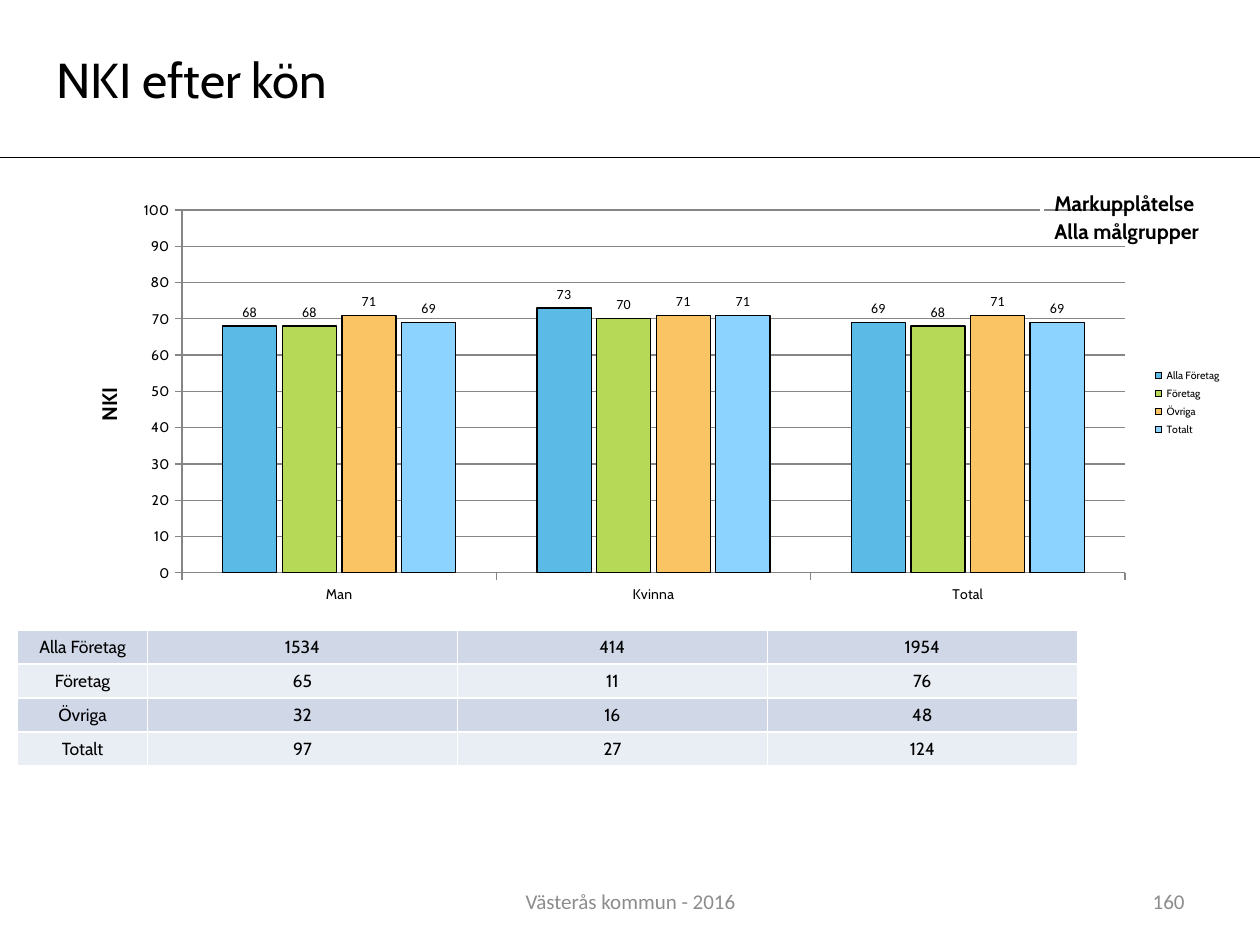
from lxml import etree
from pptx import Presentation
from pptx.chart.data import CategoryChartData
from pptx.dml.color import RGBColor
from pptx.enum.chart import XL_CHART_TYPE as ChartType, XL_LABEL_POSITION as LabelPosition
from pptx.enum.chart import XL_LEGEND_POSITION as LegendPosition, XL_TICK_MARK as TickMark
from pptx.enum.shapes import MSO_CONNECTOR as Connector, MSO_SHAPE as Shape
from pptx.enum.text import MSO_ANCHOR as Anchor, PP_ALIGN as Align
from pptx.oxml import parse_xml
from pptx.oxml.ns import nsdecls, qn
from pptx.util import Inches, Pt

# Content
TITLE = "NKI efter kön"
FILTERS = ["Markupplåtelse", "Alla målgrupper"]
CATEGORIES = ["Man", "Kvinna", "Total"]
AXIS_TITLE = "NKI"
# name, colour, index values, number of answers
GROUPS = [
    ("Alla Företag", "5CBAE6", (68, 73, 69), (1534, 414, 1954)),
    ("Företag", "B6D957", (68, 70, 68), (65, 11, 76)),
    ("Övriga", "FAC364", (71, 71, 71), (32, 16, 48)),
    ("Totalt", "8CD3FF", (69, 71, 69), (97, 27, 124)),
]
FOOTER, PAGE = "Västerås kommun - 2016", "160"

THEME = {
    "font": "Cabin", "footer_font": "Calibri",
    "ink": "000000", "paper": "FFFFFF", "grey": "8C8C8C", "grid": "868686",
    "bands": ("D0D8E8", "E9EDF4"),
    "title": 28, "heading": 12, "table": 10, "axis": 8, "legend": 6,
}
WIDTH, HEIGHT = 10, 7.5
TABLE_LEFT, TABLE_TOP, ROW_HEIGHT = 0.14, 5, 0.27
NAME_COLUMN, VALUE_COLUMN = 1.03, 2.46


def color(value):
    return RGBColor.from_string(value)


def style(font, size, name=THEME["font"], ink=THEME["ink"], bold=False):
    for key, value in {"size": Pt(size), "name": name, "bold": bold}.items():
        setattr(font, key, value)
    font.color.rgb = color(ink)


def outline(line, ink, width=0.75):
    line.color.rgb = color(ink)
    line.width = Pt(width)


def write(shape, text, align, **font):
    frame = shape.text_frame
    frame.word_wrap = True
    frame.vertical_anchor = Anchor.MIDDLE
    paragraph = frame.paragraphs[0]
    paragraph.text = text
    paragraph.alignment = align
    style(paragraph.runs[0].font, **font)
    return paragraph


def add_label(slide, box, text, **font):
    shape = slide.shapes.add_shape(Shape.RECTANGLE, *map(Inches, box))
    shape.shadow.inherit = False
    shape.fill.background()
    outline(shape.line, THEME["paper"], 2)
    return write(shape, text, Align.LEFT, **font)


def set_layout(parent, position, **values):
    """Place a chart part by shares of the chart's size."""
    for old in parent.findall(qn("c:layout")):
        parent.remove(old)
    layout = etree.Element(qn("c:layout"))
    manual = etree.SubElement(layout, qn("c:manualLayout"))
    for key, value in values.items():
        etree.SubElement(manual, qn(f"c:{key}")).set("val", str(value))
    parent.insert(position, layout)


def add_index_chart(slide):
    data = CategoryChartData(number_format="General")
    data.categories = CATEGORIES
    for name, _, values, _ in GROUPS:
        data.add_series(name, values)
    box = map(Inches, (0.49, 1.53, 9.31, 3.33))
    chart = slide.shapes.add_chart(ChartType.COLUMN_CLUSTERED, *box, data).chart
    chart.has_title = False
    style(chart.font, 18, THEME["footer_font"])

    # Columns and their values
    plot = chart.plots[0]
    plot.gap_width, plot.overlap, plot.vary_by_categories = 150, -10, False
    for series, (_, fill, _, _) in zip(plot.series, GROUPS):
        series.format.fill.solid()
        series.format.fill.fore_color.rgb = color(fill)
        outline(series.format.line, THEME["ink"])
        labels = series.data_labels
        labels.show_value = True
        labels.position = LabelPosition.OUTSIDE_END
        style(labels.font, THEME["axis"], THEME["footer_font"])

    # Axes
    value_axis = chart.value_axis
    for axis in (chart.category_axis, value_axis):
        axis.major_tick_mark, axis.minor_tick_mark = TickMark.OUTSIDE, TickMark.NONE
        outline(axis.format.line, THEME["grid"])
        style(axis.tick_labels.font, THEME["axis"])
    for key, value in {"minimum_scale": 0, "maximum_scale": 100, "major_unit": 10,
                       "has_major_gridlines": True}.items():
        setattr(value_axis, key, value)
    outline(value_axis.major_gridlines.format.line, THEME["grid"])
    title = value_axis.axis_title
    title.text_frame.text = AXIS_TITLE
    style(title.text_frame.paragraphs[0].runs[0].font, THEME["heading"], bold=True)

    # Legend and placing
    chart.has_legend = True
    chart.legend.position = LegendPosition.RIGHT
    chart.legend.include_in_layout = False
    style(chart.legend.font, THEME["legend"])
    plot_area = value_axis._element.getparent()
    set_layout(plot_area, 0, layoutTarget="inner", xMode="edge", yMode="edge",
               x=0.1025, y=0.041, w=0.804, h=0.865)
    set_layout(title._element, 1, xMode="edge", yMode="edge", x=0.025, y=0.455)


def add_cell_borders(cell):
    properties = cell._tc.get_or_add_tcPr()
    for position, side in enumerate(("lnL", "lnR", "lnT", "lnB")):
        properties.insert(position, parse_xml(
            f'<a:{side} {nsdecls("a")} w="12700"><a:solidFill>'
            f'<a:srgbClr val="{THEME["paper"]}"/></a:solidFill></a:{side}>'))


def add_answer_table(slide):
    widths = [NAME_COLUMN] + [VALUE_COLUMN] * len(CATEGORIES)
    box = (TABLE_LEFT, TABLE_TOP, sum(widths), ROW_HEIGHT * len(GROUPS))
    table = slide.shapes.add_table(len(GROUPS), len(widths), *map(Inches, box)).table
    table.first_row = False
    for column, width in zip(table.columns, widths):
        column.width = Inches(width)
    for row, (name, _, _, answers) in enumerate(GROUPS):
        for column, value in enumerate((name, *answers)):
            cell = table.cell(row, column)
            cell.fill.solid()
            cell.fill.fore_color.rgb = color(THEME["bands"][row % 2])
            paragraph = cell.text_frame.paragraphs[0]
            paragraph.text = str(value)
            paragraph.alignment = Align.CENTER
            style(paragraph.runs[0].font, THEME["table"])
            add_cell_borders(cell)


def main():
    presentation = Presentation()
    presentation.slide_width, presentation.slide_height = Inches(WIDTH), Inches(HEIGHT)
    slide = presentation.slides.add_slide(presentation.slide_layouts[6])

    # Footer
    for left, width, text, align in ((3.42, 3.17, FOOTER, Align.CENTER),
                                     (7.17, 2.33, PAGE, Align.RIGHT)):
        box = slide.shapes.add_textbox(*map(Inches, (left, 6.95, width, 0.4)))
        write(box, text, align, size=THEME["heading"],
              name=THEME["footer_font"], ink=THEME["grey"])

    add_index_chart(slide)
    add_answer_table(slide)

    # Filters above the chart
    for row, text in enumerate(FILTERS):
        add_label(slide, (8.27, 1.53 + 0.22 * row, 1.66, 0.17), text,
                  size=THEME["heading"], bold=True)

    # Heading and rule
    rule_top = Inches(HEIGHT / 6)
    rule = slide.shapes.add_connector(Connector.STRAIGHT, 0, rule_top, Inches(WIDTH), rule_top)
    outline(rule.line, THEME["ink"])
    etree.SubElement(rule._element.spPr, qn("a:effectLst"))
    heading = add_label(slide, (0.07, 0.43, 6, 0.39), TITLE, size=THEME["title"])
    heading._p.get_or_add_pPr().set("indent", str(Inches(0.28)))

    presentation.save("out.pptx")


if __name__ == "__main__":
    main()
